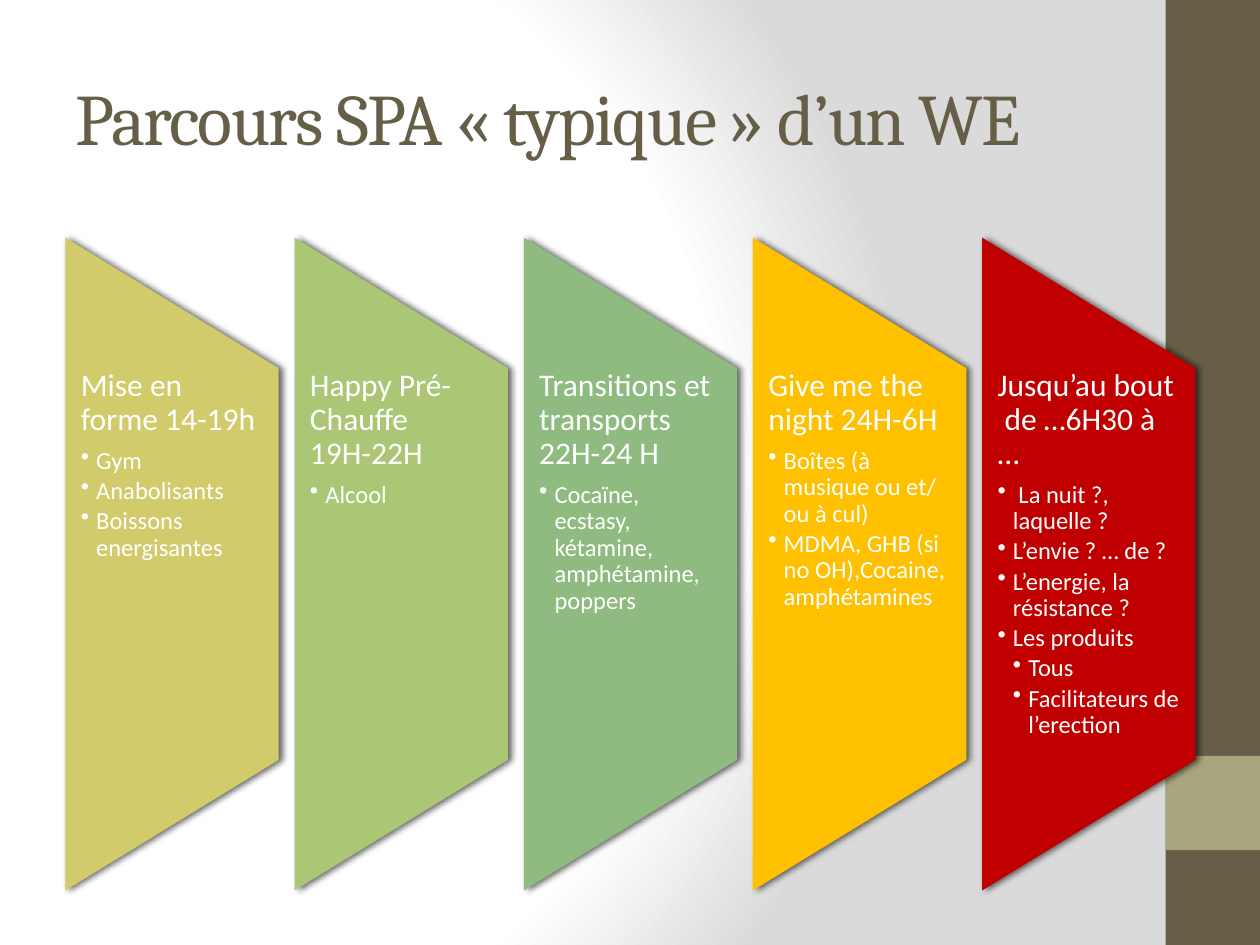
"""Build the slide on the typical stages of a weekend, as five coloured panels."""
from lxml.etree import SubElement
from pptx import Presentation
from pptx.dml.color import RGBColor
from pptx.enum.shapes import MSO_SHAPE
from pptx.enum.text import MSO_ANCHOR, PP_ALIGN
from pptx.oxml import parse_xml
from pptx.oxml.ns import nsdecls, qn
from pptx.util import Cm, Pt

COLOURS = {
    "brown": "675E47", "khaki": "A9A57C", "white": "FFFFFF", "grey": "DADADA",
    "straw": "D2CB6C", "lime": "ABC776", "sage": "8FBB80",
    "amber": "FFC000", "red": "C00000",
}
STAGES = [
    ("straw", "Mise en forme 14-19h",
     [(1, "Gym"), (1, "Anabolisants"), (1, "Boissons energisantes")]),
    ("lime", "Happy Pré-Chauffe 19H-22H", [(1, "Alcool")]),
    ("sage", "Transitions et transports 22H-24 H",
     [(1, "Cocaïne, ecstasy, kétamine, amphétamine, poppers")]),
    ("amber", "Give me the night 24H-6H",
     [(1, "Boîtes (à musique ou et/ ou à cul)"),
      (1, "MDMA, GHB (si no OH),Cocaine, amphétamines")]),
    ("red", "Jusqu’au bout  de …6H30 à …",
     [(1, " La nuit ?, laquelle ?"), (1, "L’envie ? … de ?"),
      (1, "L’energie, la résistance ?"), (1, "Les produits"),
      (2, "Tous"), (2, "Facilitateurs de l’erection")]),
]
PANEL_LEFT, PANEL_STEP, PANEL_WIDTH = 1.32, 4.62, 4.3
PANEL_HEIGHT, PANEL_MIDDLE = 13.16, 11.37
INDENT = Cm(0.31)


def add_filled(kind, left, top, width, height, colour):
    shape = slide.shapes.add_shape(kind, Cm(left), Cm(top), Cm(width), Cm(height))
    shape.shadow.inherit = False
    shape.fill.solid()
    shape.fill.fore_color.rgb = RGBColor.from_string(COLOURS[colour])
    shape.line.fill.background()
    return shape


def style_run(run, font, size, colour):
    run.font.name = font
    run.font.size = Pt(size)
    run.font.color.rgb = RGBColor.from_string(COLOURS[colour])


prs = Presentation()
prs.slide_width, prs.slide_height = Cm(25.4), Cm(19.05)
slide = prs.slides.add_slide(prs.slide_layouts[5])

stops = "".join(
    f'<a:gs pos="{percent * 1000}"><a:srgbClr val="{COLOURS[colour]}"/></a:gs>'
    for percent, colour in [(0, "white"), (75, "white"), (100, "grey")])
slide.element.cSld.insert(0, parse_xml(
    f'<p:bg {nsdecls("p", "a")}><p:bgPr><a:gradFill><a:gsLst>{stops}</a:gsLst>'
    '<a:path path="circle">'
    '<a:fillToRect l="20000" t="50000" r="100000" b="50000"/></a:path>'
    '</a:gradFill><a:effectLst/></p:bgPr></p:bg>'))

add_filled(MSO_SHAPE.RECTANGLE, 23.5, 0, 1.9, 19.05, "brown")
add_filled(MSO_SHAPE.RECTANGLE, 23.5, 15.24, 1.9, 1.9, "khaki")

title = slide.shapes.title
title.left, title.top, title.width, title.height = Cm(1.27), Cm(0.76), Cm(21.16), Cm(3.18)
title.text_frame.text = "Parcours SPA « typique » d’un WE"
title.text_frame.vertical_anchor = MSO_ANCHOR.MIDDLE
headline = title.text_frame.paragraphs[0]
headline.alignment = PP_ALIGN.LEFT
style_run(headline.runs[0], "Cambria", 41.4, "brown")
headline.runs[0].font._element.set("spc", "-100")

for position, (colour, heading, items) in enumerate(STAGES):
    left = PANEL_LEFT + position * PANEL_STEP
    panel = add_filled(
        MSO_SHAPE.FLOWCHART_MANUAL_OPERATION,
        left + (PANEL_WIDTH - PANEL_HEIGHT) / 2, PANEL_MIDDLE - PANEL_WIDTH / 2,
        PANEL_HEIGHT, PANEL_WIDTH, colour)
    panel.rotation = 270
    effects = panel.element.spPr.find(qn("a:effectLst"))
    shade = SubElement(effects, qn("a:outerShdw"), blurRad=str(Pt(4)),
                       dist=str(Pt(2)), dir="0", rotWithShape="0")
    black = SubElement(shade, qn("a:srgbClr"), val="000000")
    SubElement(black, qn("a:alpha"), val="60000")

    stage = slide.shapes.add_textbox(
        Cm(left), Cm(7.44), Cm(PANEL_WIDTH), Cm(7.9)).text_frame
    stage.word_wrap = True
    stage.margin_left, stage.margin_right = Cm(0.31), Cm(0.32)
    stage.margin_top = stage.margin_bottom = 0
    stage.text = "\n".join([heading] + [item for _, item in items])
    levels = [0] + [level for level, _ in items]
    for paragraph, level in zip(stage.paragraphs, levels):
        size, gap = (14, 0.15) if level else (18, 0.35)
        paragraph.line_spacing = 0.9
        paragraph.space_after = Pt(size * gap)
        style_run(paragraph.runs[0], "Calibri", size, "white")
        if level:
            paragraph.level = level
            properties = paragraph._p.get_or_add_pPr()
            properties.set("marL", str(INDENT * level))
            properties.set("indent", str(-INDENT))
            SubElement(properties, qn("a:buChar"), char="•")

prs.save("out.pptx")
